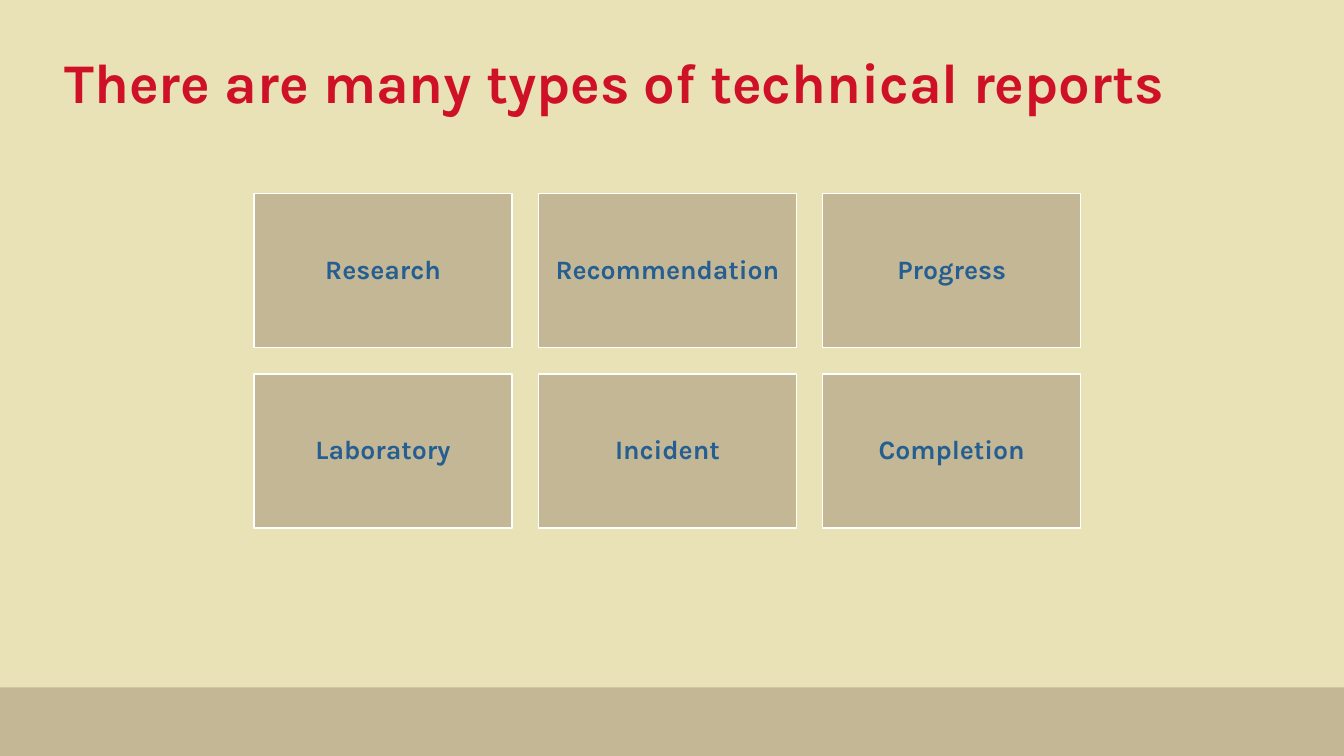
from pptx import Presentation
from pptx.dml.color import RGBColor
from pptx.enum.shapes import MSO_SHAPE
from pptx.enum.text import MSO_ANCHOR, PP_ALIGN
from pptx.util import Inches, Pt

TITLE = "There are many types of technical reports"
TYPES = ["Research", "Recommendation", "Progress",
         "Laboratory", "Incident", "Completion"]

CREAM = RGBColor(0xEA, 0xE2, 0xB7)
TAN = RGBColor(0xC4, 0xB7, 0x96)
RED = RGBColor(0xCE, 0x11, 0x26)
BLUE = RGBColor(0x25, 0x5F, 0x91)
WHITE = RGBColor(0xFF, 0xFF, 0xFF)
FONT = "Karla"
RECT = MSO_SHAPE.RECTANGLE
MIDDLE = MSO_ANCHOR.MIDDLE
LEFT, CENTER = PP_ALIGN.LEFT, PP_ALIGN.CENTER

COLS = 3
LEFT_X, TOP_Y = 2.52, 1.92
WIDE, HIGH = 2.56, 1.53
GAP = 0.26


def add_rect(slide, x, y, w, h):
    rect = slide.shapes.add_shape(RECT, Inches(x), Inches(y), Inches(w), Inches(h))
    rect.shadow.inherit = False
    rect.fill.solid()
    rect.fill.fore_color.rgb = TAN
    rect.line.fill.background()
    return rect


def write(shape, text, size, color, align):
    frame = shape.text_frame
    frame.word_wrap = True
    frame.vertical_anchor = MIDDLE
    para = frame.paragraphs[0]
    para.alignment = align
    para.line_spacing = 0.9
    run = para.add_run()
    run.text = text
    run.font.name = FONT
    run.font.size = Pt(size)
    run.font.bold = True
    run.font.color.rgb = color


def add_card(slide, index, text):
    row, col = divmod(index, COLS)
    x = LEFT_X + col * (WIDE + GAP)
    y = TOP_Y + row * (HIGH + GAP)
    card = add_rect(slide, x, y, WIDE, HIGH)
    card.line.color.rgb = WHITE
    card.line.width = Pt(1)
    frame = card.text_frame
    frame.margin_left = frame.margin_right = Inches(0.08)
    frame.margin_top = frame.margin_bottom = Inches(0.08)
    write(card, text, 19, BLUE, CENTER)


def main():
    deck = Presentation()
    deck.slide_width, deck.slide_height = Inches(13.33), Inches(7.5)
    slide = deck.slides.add_slide(deck.slide_layouts[5])
    slide.background.fill.solid()
    slide.background.fill.fore_color.rgb = CREAM
    add_rect(slide, 0, 6.82, 13.33, 0.68)

    title = slide.shapes.title
    title.left, title.top = Inches(0.54), Inches(0.18)
    title.width, title.height = Inches(12.28), Inches(1.33)
    write(title, TITLE, 40, RED, LEFT)

    for index, text in enumerate(TYPES):
        add_card(slide, index, text)
    deck.save("out.pptx")


if __name__ == "__main__":
    main()
